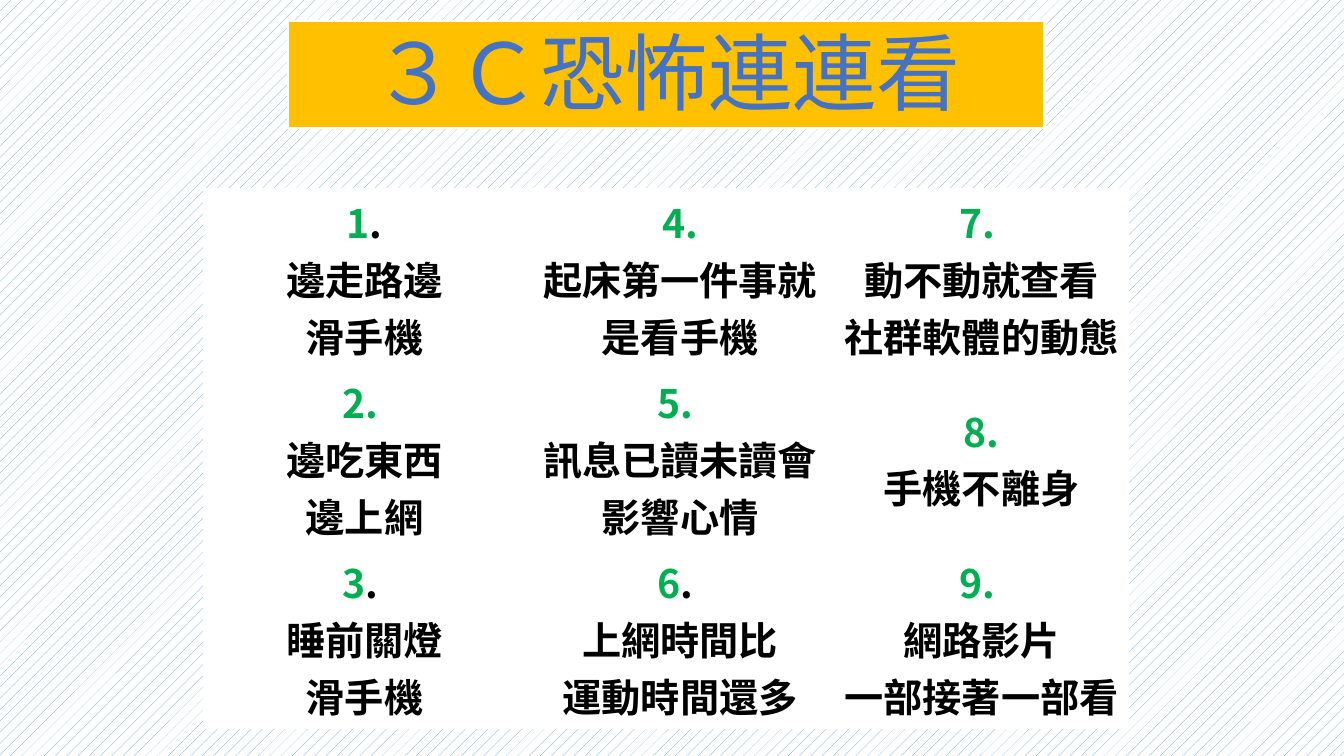
from lxml import etree
from pptx import Presentation
from pptx.dml.color import RGBColor
from pptx.enum import dml, shapes, text
from pptx.oxml.ns import qn
from pptx.util import Inches, Pt

TITLE = "３Ｃ恐怖連連看"
FONT = "Noto Sans CJK SC"
COLORS = {
    "number": "00B050", "body": "000000", "title": "4472C4",
    "banner": "FFC000", "white": "FFFFFF", "pattern": "5B9BD5",
}

# Each habit: green part of its number, black part, lines of text
HABITS = [
    [("1", ".", ["邊走路邊", "滑手機"]),
     ("4.", "", ["起床第一件事就是看手機"]),
     ("7. ", "", ["動不動就查看", "社群軟體的動態"])],
    [("2. ", "", ["邊吃東西", "邊上網"]),
     ("5. ", "", ["訊息已讀未讀會影響心情"]),
     ("8.", "", ["手機不離身"])],
    [("3", ". ", ["睡前關燈", "滑手機"]),
     ("6", ". ", ["上網時間比", "運動時間還多"]),
     ("9. ", "", ["網路影片", "一部接著一部看"])],
]
COLUMN_WIDTHS = [3.19, 3.07, 2.91]
ROW_HEIGHTS = [1.37, 1.68, 1.52]


def color(name):
    return RGBColor.from_string(COLORS[name])


def add_span(para, words, size, color_name, bold=False):
    span = para.add_run()
    span.text = words
    span.font.size = Pt(size)
    span.font.bold = bold
    span.font.color.rgb = color(color_name)
    span.font.name = FONT
    east_asian = etree.SubElement(span.font._element, qn("a:ea"))
    east_asian.set("typeface", FONT)


def fill_cell(cell, habit):
    number, dot, lines = habit
    cell.fill.solid()
    cell.fill.fore_color.rgb = color("white")
    cell.vertical_anchor = text.MSO_ANCHOR.MIDDLE
    cell.margin_left = cell.margin_right = Inches(0.07)
    cell.margin_top = cell.margin_bottom = Inches(0.05)
    paragraphs = [[(number, "number"), (dot, "body")]]
    paragraphs += [[(line, "body")] for line in lines]
    for index, spans in enumerate(paragraphs):
        frame = cell.text_frame
        para = frame.add_paragraph() if index else frame.paragraphs[0]
        para.alignment = text.PP_ALIGN.CENTER
        for words, color_name in spans:
            if words:
                add_span(para, words, 28, color_name, bold=True)


def add_habit_table(page):
    table = page.shapes.add_table(
        len(ROW_HEIGHTS), len(COLUMN_WIDTHS), Inches(2.02), Inches(1.87),
        Inches(sum(COLUMN_WIDTHS)), Inches(sum(ROW_HEIGHTS))).table
    table.first_row = table.horz_banding = False
    for column, width in zip(table.columns, COLUMN_WIDTHS):
        column.width = Inches(width)
    for row, height, habits in zip(table.rows, ROW_HEIGHTS, HABITS):
        row.height = Inches(height)
        for cell, habit in zip(row.cells, habits):
            fill_cell(cell, habit)


def add_banner(page):
    banner = page.shapes.add_shape(
        shapes.MSO_SHAPE.RECTANGLE,
        Inches(2.86), Inches(0.21), Inches(7.5), Inches(1.06))
    banner.shadow.inherit = False
    banner.fill.solid()
    banner.fill.fore_color.rgb = color("banner")
    banner.line.color.rgb = color("white")
    banner.line.width = Pt(1.5)
    frame = banner.text_frame
    frame.word_wrap = True
    frame.vertical_anchor = text.MSO_ANCHOR.BOTTOM
    para = frame.paragraphs[0]
    para.alignment = text.PP_ALIGN.CENTER
    para.line_spacing = 0.9
    add_span(para, TITLE, 60, "title")


def main():
    deck = Presentation()
    deck.slide_width, deck.slide_height = Inches(13.33), Inches(7.5)
    page = deck.slides.add_slide(deck.slide_layouts[6])
    backdrop = page.background.fill
    backdrop.patterned()
    backdrop.pattern = dml.MSO_PATTERN.PERCENT_10
    backdrop.fore_color.rgb = color("pattern")
    backdrop.back_color.rgb = color("white")
    add_habit_table(page)
    add_banner(page)
    deck.save("out.pptx")


if __name__ == "__main__":
    main()
